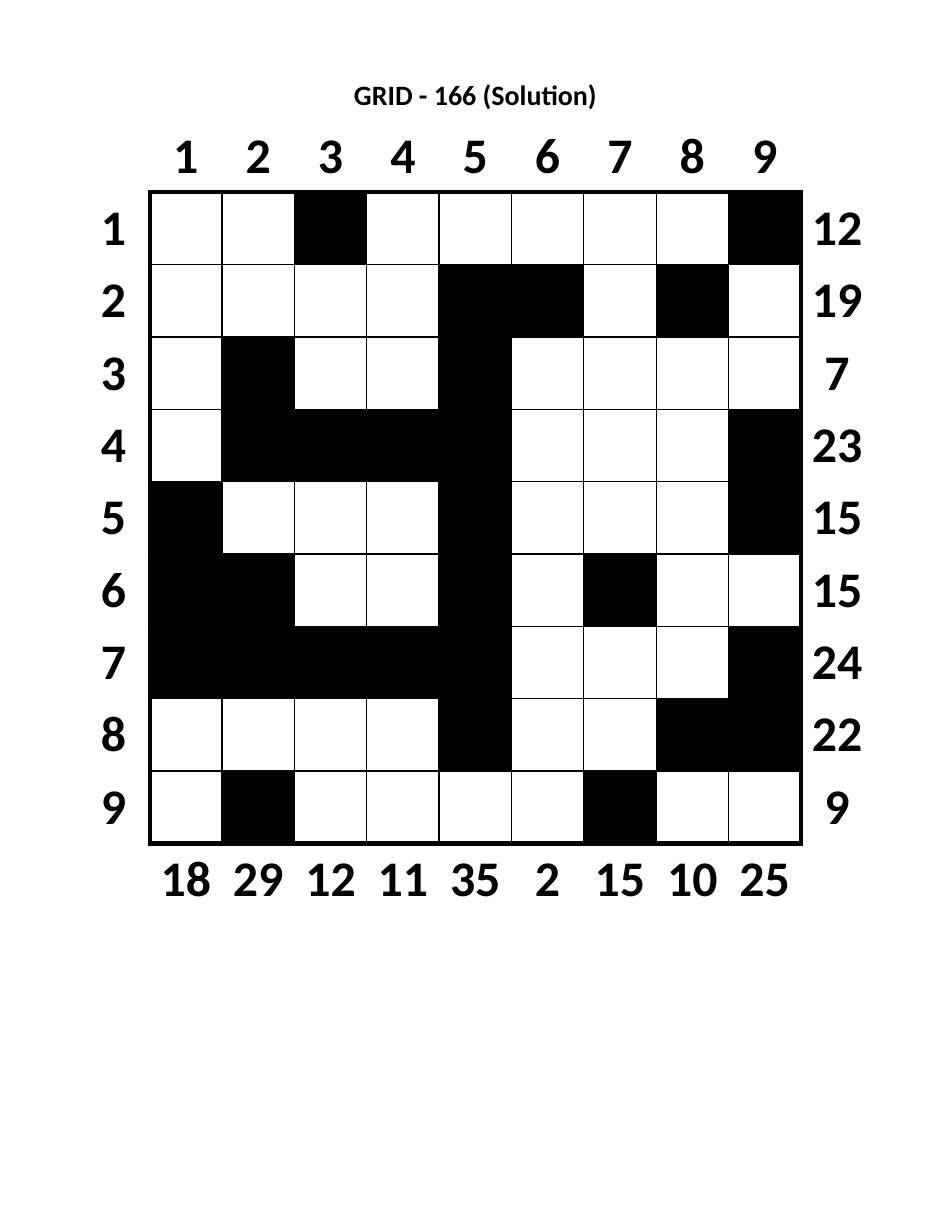
from lxml.etree import SubElement
from pptx import Presentation
from pptx.dml.color import RGBColor
from pptx.enum.text import MSO_ANCHOR, MSO_AUTO_SIZE, PP_ALIGN
from pptx.oxml.ns import qn
from pptx.util import Inches, Pt

BLACK = RGBColor(0x00, 0x00, 0x00)
WHITE = RGBColor(0xFF, 0xFF, 0xFF)
FONT = "Calibri"

LEFT, WIDTH = 0.69, 7.11
TITLE_TOP, TITLE_HEIGHT = 0.69, 0.3
GRID_TOP = 1.07

# "#" is a filled square, "." an open one
PUZZLE = [
    "..#.....#",
    "....##.#.",
    ".#..#....",
    ".####...#",
    "#...#...#",
    "##..#.#..",
    "#####...#",
    "....#..##",
    ".#....#..",
]
ROW_SUMS = [12, 19, 7, 23, 15, 15, 24, 22, 9]
COLUMN_SUMS = [18, 29, 12, 11, 35, 2, 15, 10, 25]
SIZE = len(PUZZLE)
LAST = SIZE + 1  # index of the row and column that hold the sums

# Each side of a cell, with the step to the neighbour it touches
SIDES = {"a:lnL": (0, -1), "a:lnR": (0, 1), "a:lnT": (-1, 0), "a:lnB": (1, 0)}
THIN, THICK = Pt(1), Pt(3)


def add_text(frame, text, size):
    paragraph = frame.paragraphs[0]
    paragraph.alignment = PP_ALIGN.CENTER
    run = paragraph.add_run()
    run.text = text
    run.font.name = FONT
    run.font.size = Pt(size)
    run.font.bold = True
    run.font.color.rgb = BLACK


def add_title(slide, text):
    title = slide.shapes.add_textbox(
        Inches(LEFT), Inches(TITLE_TOP), Inches(WIDTH), Inches(TITLE_HEIGHT))
    frame = title.text_frame
    frame.word_wrap = True
    frame.auto_size = MSO_AUTO_SIZE.SHAPE_TO_FIT_TEXT
    frame.margin_left = frame.margin_right = 0
    frame.margin_top = frame.margin_bottom = 0
    add_text(frame, text, 18)


def in_puzzle(row, column):
    return 1 <= row <= SIZE and 1 <= column <= SIZE


def label_at(row, column):
    """Return the number in the margin around the puzzle, or an empty text."""
    if 1 <= column <= SIZE:
        if row == 0:
            return str(column)
        if row == LAST:
            return str(COLUMN_SUMS[column - 1])
    if 1 <= row <= SIZE:
        if column == 0:
            return str(row)
        if column == LAST:
            return str(ROW_SUMS[row - 1])
    return ""


def set_borders(cell, row, column):
    """Thin lines inside the puzzle, a thick frame around it, none elsewhere."""
    properties = cell._tc.get_or_add_tcPr()
    for tag, (down, right) in SIDES.items():
        inside = in_puzzle(row, column) + in_puzzle(row + down, column + right)
        line = SubElement(properties, qn(tag))
        if inside == 0:
            SubElement(line, qn("a:noFill"))
            continue
        line.set("w", str(THIN if inside == 2 else THICK))
        fill = SubElement(line, qn("a:solidFill"))
        SubElement(fill, qn("a:srgbClr")).set("val", str(BLACK))


def format_cell(cell, row, column):
    cell.margin_left = cell.margin_right = 0
    cell.margin_top = cell.margin_bottom = 0
    cell.vertical_anchor = MSO_ANCHOR.MIDDLE
    set_borders(cell, row, column)
    filled = in_puzzle(row, column) and PUZZLE[row - 1][column - 1] == "#"
    cell.fill.solid()
    cell.fill.fore_color.rgb = BLACK if filled else WHITE
    label = label_at(row, column)
    if label:
        add_text(cell.text_frame, label, 32)


def add_grid(slide):
    count = SIZE + 2
    grid = slide.shapes.add_table(
        count, count, Inches(LEFT), Inches(GRID_TOP),
        Inches(WIDTH), Inches(WIDTH)).table
    grid.first_row = False
    grid.horz_banding = False
    for band in [*grid.columns]:
        band.width = Inches(WIDTH / count)
    for band in grid.rows:
        band.height = Inches(WIDTH / count)
    for row in range(count):
        for column in range(count):
            format_cell(grid.cell(row, column), row, column)


def main():
    presentation = Presentation()
    presentation.slide_width = Inches(8.5)
    presentation.slide_height = Inches(11)
    slide = presentation.slides.add_slide(presentation.slide_layouts[6])

    add_title(slide, "GRID - 166 (Solution)")
    add_grid(slide)

    presentation.save("out.pptx")


if __name__ == "__main__":
    main()
